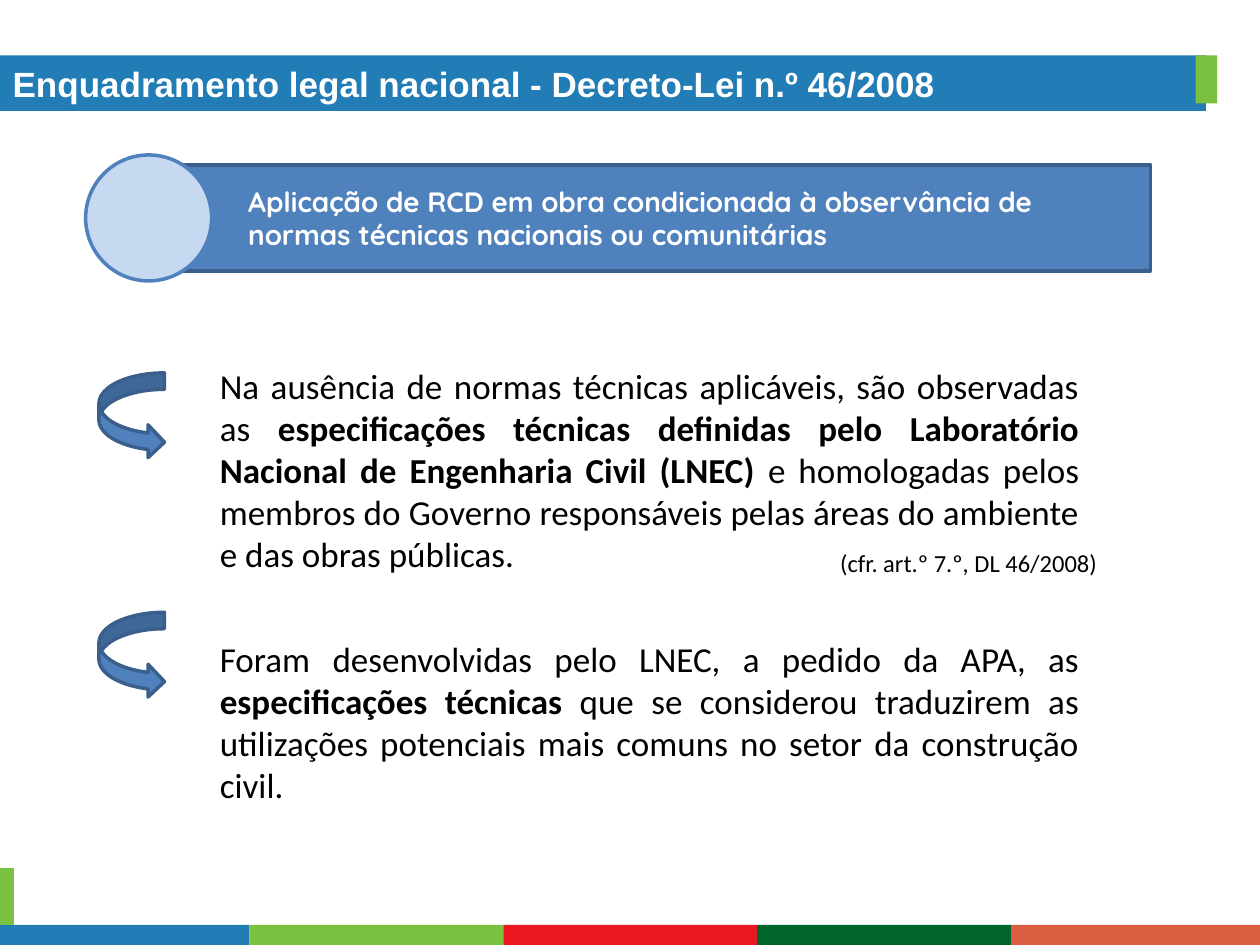
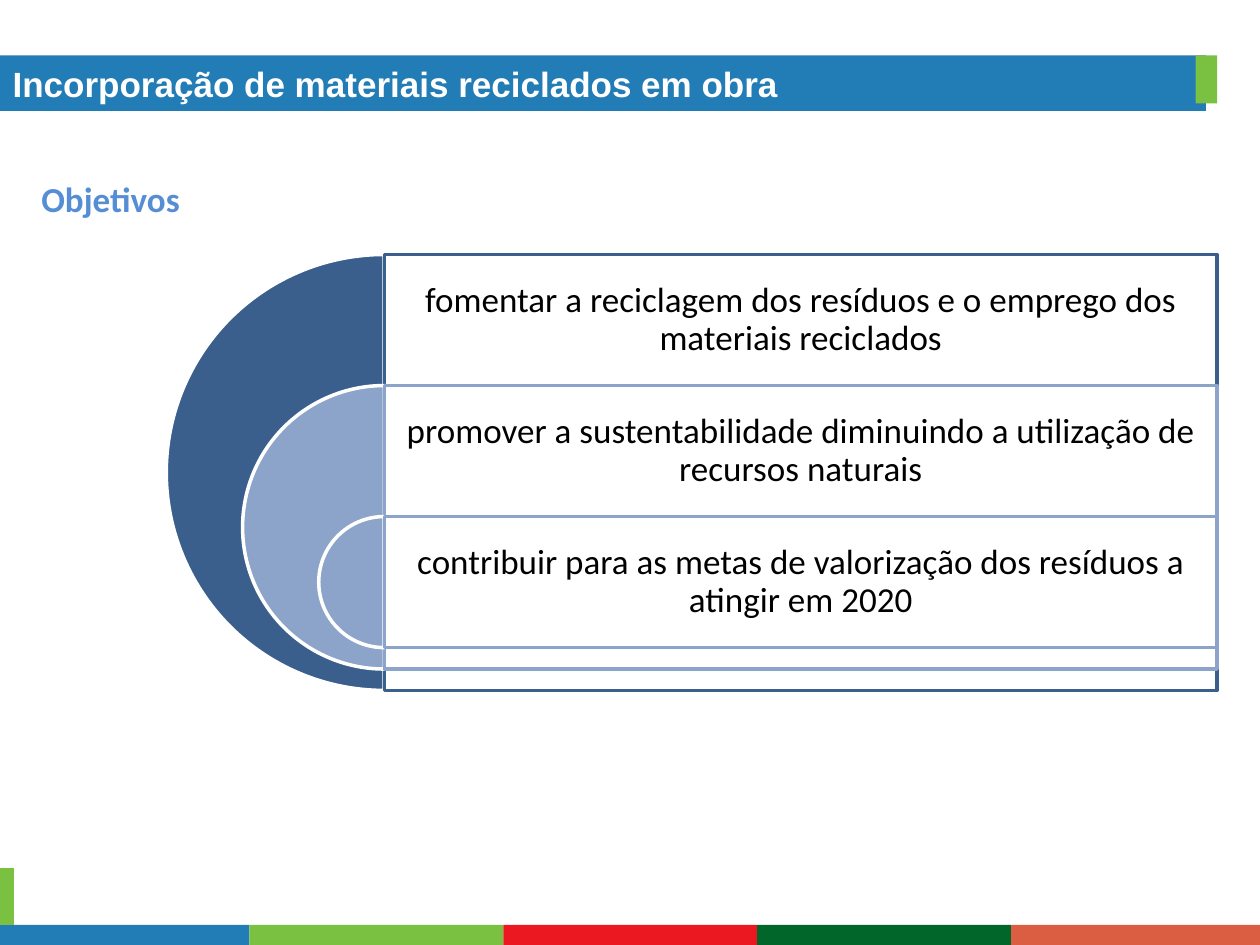
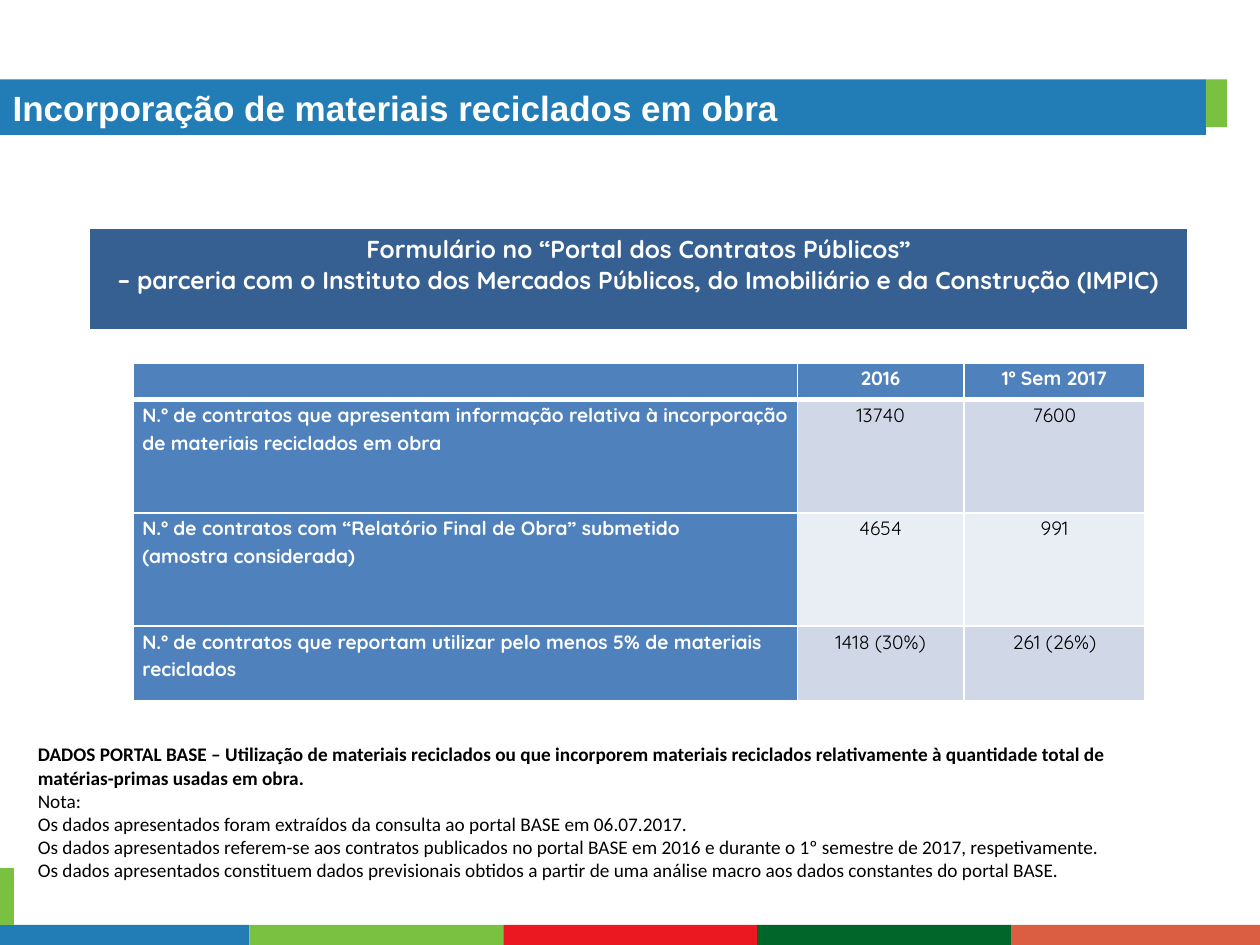
from dataclasses import dataclass, replace
from typing import Optional

from lxml import etree
from pptx import Presentation
from pptx.dml.color import RGBColor
from pptx.enum.shapes import MSO_SHAPE
from pptx.enum.text import MSO_ANCHOR, MSO_AUTO_SIZE, PP_ALIGN
from pptx.oxml.ns import qn
from pptx.shapes.autoshape import Shape
from pptx.slide import Slide
from pptx.table import Table, _Cell
from pptx.text.text import TextFrame
from pptx.util import Emu, Inches, Pt

RECT, OVAL, PIE = MSO_SHAPE.RECTANGLE, MSO_SHAPE.OVAL, MSO_SHAPE.CHORD
PIE = MSO_SHAPE.PIE
STEP, HOOK = MSO_SHAPE.FLOWCHART_PROCESS, MSO_SHAPE.CURVED_RIGHT_ARROW
TOP, MIDDLE = MSO_ANCHOR.TOP, MSO_ANCHOR.MIDDLE
LEFT, CENTER, JUSTIFY = PP_ALIGN.LEFT, PP_ALIGN.CENTER, PP_ALIGN.JUSTIFY
FIXED = MSO_AUTO_SIZE.NONE

# The slide is a grid of 100 columns by 75 rows
WIDE, HIGH = Inches(10), Inches(7.5)
COLS, ROWS = 100, 75


@dataclass(frozen=True)
class Look:
    """How a text is set."""
    size: float
    font: str = "Calibri"
    color: str = "000000"
    bold: bool = False
    align: PP_ALIGN = LEFT
    lead: float = 1.0
    after: float = 0


@dataclass(frozen=True)
class Theme:
    """Colours and type of the whole deck."""
    white: str = "FFFFFF"
    blue: str = "227CB5"
    green: str = "7AC142"
    strip: tuple = ("227CB5", "7AC142", "EB1821", "01662A", "DC5E42")
    steel: str = "4F81BD"
    edge: str = "3A5F8C"
    pale: str = "C6D9F1"
    mist: str = "8CA4C9"
    navy: str = "376092"
    bands: tuple = ("D0D8E8", "E9EDF4")
    title: Look = Look(20, "Arial", "FFFFFF", True)
    lead: Look = Look(16, "Quicksand", "FFFFFF", True)
    body: Look = Look(20, align=JUSTIFY)
    goal: Look = Look(20, align=CENTER, lead=0.9)
    label: Look = Look(20, color="558ED5", bold=True, lead=1.15, after=10)
    cite: Look = Look(14, align=JUSTIFY)
    note: Look = Look(11)
    sign: Look = Look(14, "Quicksand", "FFFFFF", True, CENTER)
    cell: Look = Look(11, "Quicksand", align=CENTER, lead=1.15)


THEME = Theme()


@dataclass(frozen=True)
class Box:
    """A place on the grid."""
    col: float
    row: float
    wide: float
    high: float

    def place(self) -> tuple[Emu, Emu, Emu, Emu]:
        return (across(self.col), down(self.row),
                across(self.wide), down(self.high))


def across(cols: float) -> Emu:
    return Emu(round(WIDE * cols / COLS))


def down(rows: float) -> Emu:
    return Emu(round(HIGH * rows / ROWS))


def tint(code: str) -> RGBColor:
    return RGBColor.from_string(code)


# Text
def write(frame: TextFrame, text: str, look: Look) -> None:
    """Lines become paragraphs; parts between asterisks are bold."""
    frame.text = text.replace("*", "")
    for para, line in zip(frame.paragraphs, text.split("\n")):
        if "*" in line:
            para.clear()
            for part in line.split("*"):
                para.add_run().text = part
        para.alignment, para.line_spacing = look.align, look.lead
        para.space_before, para.space_after = Pt(0), Pt(look.after)
        for spot, run in enumerate(para.runs):
            font = run.font
            font.name, font.size = look.font, Pt(look.size)
            font.color.rgb = tint(look.color)
            font.bold = look.bold or spot % 2 == 1


def add_text(slide: Slide, box: Box, text: str, look: Look,
             wrap: bool = True, inset: Optional[float] = None) -> None:
    frame = slide.shapes.add_textbox(*box.place()).text_frame
    frame.word_wrap = wrap
    if inset is not None:
        frame.vertical_anchor = MIDDLE
        frame.margin_left = frame.margin_right = Inches(inset)
        frame.margin_top = frame.margin_bottom = Inches(inset)
    write(frame, text, look)


def fill_holder(slide: Slide, slot: int, box: Box, text: str, look: Look,
                anchor: MSO_ANCHOR = TOP) -> Shape:
    """Move a template placeholder, write in it and drop its bullets."""
    item = slide.placeholders[slot]
    item.left, item.top, item.width, item.height = box.place()
    frame = item.text_frame
    frame.auto_size, frame.vertical_anchor = FIXED, anchor
    frame.word_wrap = True
    write(frame, text, look)
    for para in frame.paragraphs:
        props = para._p.get_or_add_pPr()
        props.set("marL", "0")
        props.set("indent", "0")
        etree.SubElement(props, qn("a:buNone"))
    return item


# Shapes
def draw(slide: Slide, kind: MSO_SHAPE, box: Box, fill: str,
         line: Optional[str] = None) -> Shape:
    item = slide.shapes.add_shape(kind, *box.place())
    item.shadow.inherit = False
    item.fill.solid()
    item.fill.fore_color.rgb = tint(fill)
    if line:
        item.line.color.rgb, item.line.width = tint(line), Pt(2)
    else:
        item.line.fill.background()
    return item


def fade(item: Shape, share: int) -> None:
    code = item.element.spPr.find(qn("a:solidFill")).find(qn("a:srgbClr"))
    etree.SubElement(code, qn("a:alpha")).set("val", str(share * 1000))


# Tables
def add_grid(slide: Slide, box: Box, cols: list[float],
             rows: list[float]) -> Table:
    table = slide.shapes.add_table(len(rows), len(cols), *box.place()).table
    for col, wide in zip(table.columns, cols):
        col.width = across(wide)
    for row, high in zip(table.rows, rows):
        row.height = down(high)
    return table


def paint(cell: _Cell, fill: str, over: float = 1, under: float = 1) -> None:
    """White rules round a cell, then its fill."""
    props = cell._tc.get_or_add_tcPr()
    for side, width in zip("LRTB", (1, 1, over, under)):
        rule = etree.SubElement(props, qn(f"a:ln{side}"), w=str(Pt(width)))
        solid = etree.SubElement(rule, qn("a:solidFill"))
        etree.SubElement(solid, qn("a:srgbClr"), val=THEME.white)
    cell.fill.solid()
    cell.fill.fore_color.rgb = tint(fill)


# Shared parts
def add_strip(deck: Presentation, slide: Slide) -> None:
    """Draw the footer bands and hand them to the master."""
    edges = [0] + [19.8 + 20.15 * i for i in range(4)] + [COLS]
    bars = [draw(slide, RECT, Box(a, 73.4, b - a, 1.6), fill)
            for a, b, fill in zip(edges, edges[1:], THEME.strip)]
    bars.append(draw(slide, RECT, Box(0, 68.9, 1.1, 4.5), THEME.green))
    tree = deck.slide_master.element.cSld.spTree
    for mark, bar in enumerate(bars, 20):
        bar.element.nvSpPr.cNvPr.set("id", str(mark))
        tree.append(bar.element)


def add_slide(deck: Presentation, layout: int, title: str,
              row: float = 4.4, tab: float = 94.9) -> Slide:
    slide = deck.slides.add_slide(deck.slide_layouts[layout])
    band = fill_holder(slide, 0, Box(0, row, 95.7, 4.4), title,
                       THEME.title, MIDDLE)
    band.fill.solid()
    band.fill.fore_color.rgb = tint(THEME.blue)
    draw(slide, RECT, Box(tab, row, 1.7, 3.8), THEME.green)
    return slide


# Slide 1: legal frame
CLAIMS = (
    (28.4, 20.9, 29.6,
     "Na ausência de normas técnicas aplicáveis, são observadas as "
     "*especificações técnicas definidas pelo Laboratório Nacional de "
     "Engenharia Civil (LNEC) *e homologadas pelos membros do Governo "
     "responsáveis pelas áreas do ambiente e das obras públicas."),
    (50.1, 17.5, 48.6,
     "Foram desenvolvidas pelo LNEC, a pedido da APA, as *especificações "
     "técnicas *que se considerou traduzirem as utilizações potenciais mais "
     "comuns no setor da construção civil."),
)


def add_law(deck: Presentation) -> Slide:
    slide = add_slide(deck, 3,
                      "Enquadramento legal nacional - Decreto-Lei n.º 46/2008")
    rule = draw(slide, STEP, Box(11.8, 13.1, 79.5, 8.4),
                THEME.steel, THEME.edge)
    frame = rule.text_frame
    frame.word_wrap, frame.vertical_anchor = True, MIDDLE
    frame.margin_left = Inches(0.79)
    write(frame, "Aplicação de RCD em obra condicionada à observância de "
          "normas técnicas nacionais ou comunitárias", THEME.lead)
    draw(slide, OVAL, Box(6.8, 12.3, 10, 10), THEME.pale, THEME.steel)
    for slot, (row, high, hook, text) in enumerate(CLAIMS, 1):
        draw(slide, HOOK, Box(7.85, hook, 5.2, 6.8), THEME.steel, THEME.edge)
        fill_holder(slide, slot, Box(16.45, row, 70.2, high), text,
                    THEME.body)
    add_text(slide, Box(65.7, 43, 22.6, 3.4), "(cfr. art.º 7.º, DL 46/2008)",
             THEME.cite, wrap=False)
    return slide


# Slide 2: goals
WORKS = "Incorporação de materiais reciclados em obra"
GOALS = (
    (THEME.edge, "fomentar a reciclagem dos resíduos e o emprego dos "
                 "materiais reciclados"),
    (THEME.mist, "promover a sustentabilidade diminuindo a utilização de "
                 "recursos naturais"),
    (THEME.mist, "contribuir para as metas de valorização dos resíduos a "
                 "atingir em 2020"),
)


def add_goals(deck: Presentation) -> None:
    slide = add_slide(deck, 5, WORKS)
    add_text(slide, Box(2.3, 13.1, 13, 4.9), "Objetivos", THEME.label)
    axis, wide, first, step, shrink = 30.5, 66.1, 20.2, 10.4, 12.1
    for i, (color, text) in enumerate(GOALS):
        row, size = first + step * i, 34.6 - shrink * i
        ring = draw(slide, PIE, Box(axis - size / 2, row, size, size),
                    color, THEME.white)
        ring.adjustments[0], ring.adjustments[1] = 54, 162
        fade(draw(slide, RECT, Box(axis, row, wide, size),
                  THEME.white, color), 90)
        add_text(slide, Box(axis, row, wide, step), text, THEME.goal,
                 inset=0.08)


# Slide 3: data
DATA = (
    ("", "2016", "1º Sem 2017"),
    ("N.º de contratos que apresentam informação relativa à incorporação de "
     "materiais reciclados em obra", "13740", "7600"),
    ("N.º de contratos com “Relatório Final de Obra” submetido\n"
     "(amostra considerada)", "4654", "991"),
    ("N.º de contratos que reportam utilizar pelo menos 5% de materiais "
     "reciclados", "1418 (30%)", "261 (26%)"),
)
NOTES = (
    "*DADOS PORTAL BASE – Utilização de materiais reciclados ou que "
    "incorporem materiais reciclados relativamente à quantidade total de*\n"
    "*matérias-primas usadas em obra.*\n"
    "Nota:\n"
    "Os dados apresentados foram extraídos da consulta ao portal BASE em "
    "06.07.2017.\n"
    "Os dados apresentados referem-se aos contratos publicados no portal "
    "BASE em 2016 e durante o 1º semestre de 2017, respetivamente.\n"
    "Os dados apresentados constituem dados previsionais obtidos a partir de "
    "uma análise macro aos dados constantes do portal BASE."
)


def add_data(deck: Presentation) -> None:
    slide = add_slide(deck, 1, WORKS, row=6.3, tab=95.7)
    table = add_grid(slide, Box(10.6, 28.8, 80.3, 26.8),
                     [52.7, 13.2, 14.4], [2.9, 9, 9, 5.9])
    head = replace(THEME.cell, color=THEME.white, bold=True)
    for r, line in enumerate(DATA):
        for c, text in enumerate(line):
            cell, dark = table.cell(r, c), r == 0 or c == 0
            cell.margin_left = cell.margin_right = Inches(0.07)
            cell.margin_top = cell.margin_bottom = 0
            look = head if dark else THEME.cell
            if c == 0:
                look = replace(look, align=LEFT)
            if "\n" not in text:
                look = replace(look, after=10)
            write(cell.text_frame, text, look)
            if not text:
                mark = cell.text_frame.paragraphs[0]._p
                mark.get_or_add_endParaRPr().set("sz", str(look.size * 100))
            paint(cell, THEME.steel if dark else THEME.bands[(r - 1) % 2],
                  over=3 if r == 1 else 1, under=3 if r == 0 else 1)
    fill_holder(slide, 1, Box(2, 58.4, 92.4, 12.1), NOTES, THEME.note, MIDDLE)
    sign = add_grid(slide, Box(7.1, 18.1, 87.2, 8.2), [87.2], [8.2]).cell(0, 0)
    write(sign.text_frame, "Formulário no “Portal dos Contratos Públicos”\n"
          "– parceria com o Instituto dos Mercados Públicos, do Imobiliário "
          "e da Construção (IMPIC)", THEME.sign)
    paint(sign, THEME.navy, under=3)


def main() -> None:
    deck = Presentation()
    deck.slide_width, deck.slide_height = WIDE, HIGH
    add_strip(deck, add_law(deck))
    add_goals(deck)
    add_data(deck)
    deck.save("out.pptx")


if __name__ == "__main__":
    main()
